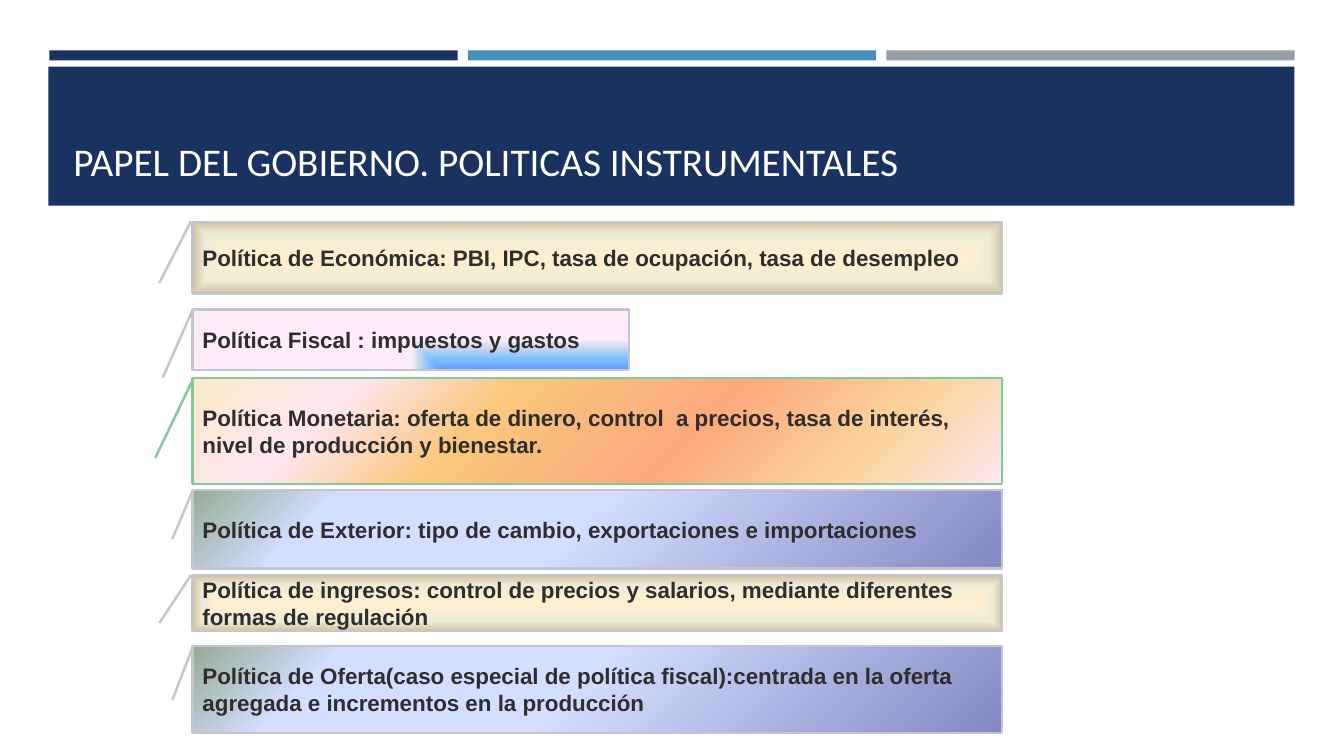
import pptx
import pptx.util
import pptx.dml.color
import pptx.enum.shapes
import pptx.enum.text
import pptx.oxml
import pptx.oxml.ns

Inches = pptx.util.Inches
SHAPE = pptx.enum.shapes.MSO_SHAPE
ANCHOR = pptx.enum.text.MSO_ANCHOR
ALIGN = pptx.enum.text.PP_ALIGN

NAVY, GRAY = "1A3260", "C4C6CF"
CALLOUT_FONT = {"name": "Arial", "size": pptx.util.Pt(16), "bold": True}
TITLE_FONT = {"name": "Calibri", "size": pptx.util.Pt(28)}

# Gradients: stops as (percent, colour), then the XML of their direction


def path_direction(kind, left, top, right, bottom):
    return (f'<a:path path="{kind}"><a:fillToRect l="{left * 1000}" t="{top * 1000}" '
            f'r="{right * 1000}" b="{bottom * 1000}"/></a:path>')


CREAM = ([(0, "FFEFD1"), (65, "F0EBD5"), (100, "D1C39F")],
         path_direction("shape", 50, 50, 50, 50))
PINK = ([(0, "5E9EFF"), (40, "85C2FF"), (70, "C4D6EB"), (100, "FFEBFA")],
        path_direction("rect", 100, 100, 0, 0))
ORANGE = ([(0, "FBEAC7"), (18, "FEE7F2"), (36, "FAC77D"), (61, "FBA97D"),
           (82, "FBD49C"), (100, "FEE7F2")],
          '<a:lin ang="2700000" scaled="0"/>')
VIOLET = ([(0, "8488C4"), (53, "D4DEFF"), (83, "D4DEFF"), (100, "96AB94")],
          path_direction("circle", 100, 100, 0, 0))

# Leader lines: start y, start x, end y, end x as shares of the box
LEADER_LONG = (-0.006, -0.002, 0.856, -0.041)
LEADER_SHORT = (0.018, 0, 0.623, -0.025)

# Policies: text, top, width, height, gradient, leader, line colour
POLICIES = [
    ("Política de Económica: PBI, IPC, tasa de ocupación, tasa de desempleo",
     2.2, 8.03, 0.71, CREAM, LEADER_LONG, GRAY),
    ("Política Fiscal : impuestos y gastos",
     3.07, 4.33, 0.6, PINK, (-0.004, 0.001, 1.125, -0.068), GRAY),
    ("Política Monetaria: oferta de dinero, control  a precios, tasa de interés, "
     "nivel de producción y bienestar.",
     3.75, 8.03, 1.05, ORANGE, (0.038, -0.001, 0.753, -0.046), "84C99C"),
    ("Política de Exterior: tipo de cambio, exportaciones e importaciones",
     4.86, 8.03, 0.78, VIOLET, LEADER_SHORT, GRAY),
    ("Política de ingresos: control de precios y salarios, mediante diferentes "
     "formas de regulación",
     5.71, 8.03, 0.55, CREAM, LEADER_LONG, GRAY),
    ("Política de Oferta(caso especial de política fiscal):centrada en la oferta "
     "agregada e incrementos en la producción",
     6.41, 8.03, 0.86, VIOLET, LEADER_SHORT, GRAY),
]


def rgb(color):
    return pptx.dml.color.RGBColor.from_string(color)


def add_bar(slide, left, top, width, height, color):
    sp = slide.shapes.add_shape(SHAPE.RECTANGLE, Inches(left), Inches(top),
                                Inches(width), Inches(height))
    sp.shadow.inherit = False
    sp.fill.solid()
    sp.fill.fore_color.rgb = rgb(color)
    sp.line.fill.background()


def write_text(sp, text, font, color, anchor):
    tf = sp.text_frame
    tf.word_wrap = True
    tf.vertical_anchor = anchor
    p = tf.paragraphs[0]
    p.alignment = ALIGN.LEFT
    r = p.add_run()
    r.text = text
    for name, value in font.items():
        setattr(r.font, name, value)
    r.font.color.rgb = rgb(color)
    return p


def fill_gradient(sp, stops, direction):
    stop_xml = "".join(f'<a:gs pos="{pos * 1000}"><a:srgbClr val="{color}"/></a:gs>'
                       for pos, color in stops)
    grad = pptx.oxml.parse_xml(
        f'<a:gradFill {pptx.oxml.ns.nsdecls("a")} rotWithShape="1">'
        f'<a:gsLst>{stop_xml}</a:gsLst>{direction}</a:gradFill>')
    geometry = sp._element.spPr.find(pptx.oxml.ns.qn("a:prstGeom"))
    geometry.addnext(grad)


def add_callout(slide, text, top, width, height, gradient, leader, line_color):
    sp = slide.shapes.add_shape(SHAPE.LINE_CALLOUT_1, Inches(1.91), Inches(top),
                                Inches(width), Inches(height))
    sp.shadow.inherit = False
    for i, value in enumerate(leader):
        sp.adjustments[i] = value
    fill_gradient(sp, *gradient)
    sp.line.color.rgb = rgb(line_color)
    sp.line.width = pptx.util.Pt(1.75)
    write_text(sp, text, CALLOUT_FONT, "2E2E2E", ANCHOR.MIDDLE)


def add_title(slide, text):
    sp = slide.shapes.add_textbox(Inches(0.63), Inches(0.8), Inches(12.06), Inches(1.08))
    p = write_text(sp, text, TITLE_FONT, "FFFFFF", ANCHOR.BOTTOM)
    p.line_spacing = 2.0


def main():
    prs = pptx.Presentation()
    prs.slide_width, prs.slide_height = Inches(13.33), Inches(7.5)
    slide = prs.slides.add_slide(prs.slide_layouts[6])

    # Header bars and title band
    for i, color in enumerate([NAVY, "4590B8", "969FA7"]):
        add_bar(slide, 0.49 + i * 4.15, 0.5, 4.05, 0.1, color)
    add_bar(slide, 0.48, 0.66, 12.36, 1.38, NAVY)
    add_title(slide, "PAPEL DEL GOBIERNO. POLITICAS INSTRUMENTALES")

    # Policy callouts
    for policy in POLICIES:
        add_callout(slide, *policy)

    prs.save("out.pptx")


if __name__ == "__main__":
    main()
